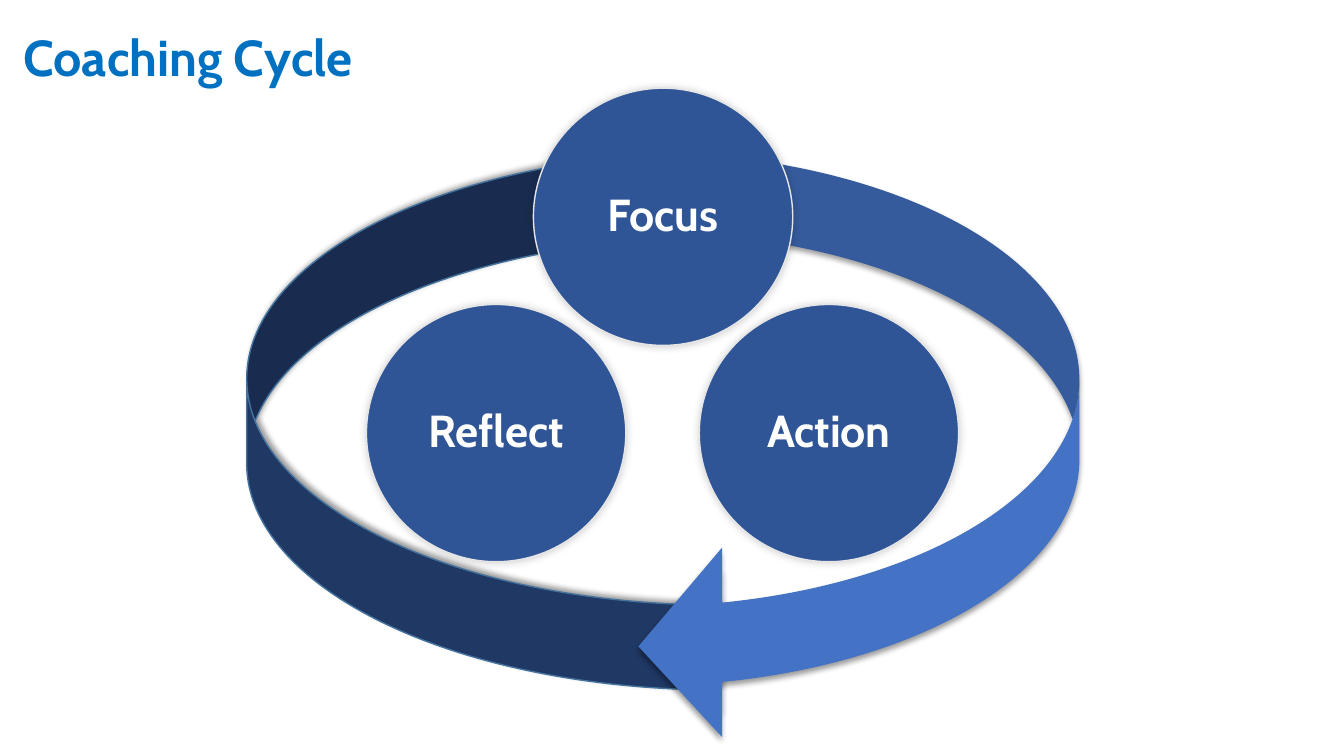
import pptx
import pptx.dml.color
import pptx.enum.shapes
import pptx.enum.text
import pptx.oxml.ns
import pptx.util
from lxml import etree

EMU_PER_PX = 9525
FONT = "Cabin"
CIRCLE_SIZE = (247, 245)
STAGES = [("Focus", 508, 84), ("Action", 666, 290), ("Reflect", 349, 290)]

qn = pptx.oxml.ns.qn
SHAPES = pptx.enum.shapes.MSO_SHAPE


def px(length):
    return pptx.util.Emu(length * EMU_PER_PX)


def rgb(hex_color):
    return pptx.dml.color.RGBColor.from_string(hex_color)


def add_shadow(shape, opacity, blur, distance, angle):
    """Give the shape a black outer shadow: percent, points, points, degrees."""
    shape.shadow.inherit = False
    effects = shape.element.spPr.find(qn("a:effectLst"))
    shadow = etree.SubElement(
        effects, qn("a:outerShdw"),
        blurRad=str(pptx.util.Pt(blur)), dist=str(pptx.util.Pt(distance)),
        dir=str(angle * 60000), algn="ctr", rotWithShape="0")
    color = etree.SubElement(shadow, qn("a:srgbClr"), val="000000")
    etree.SubElement(color, qn("a:alpha"), val=str(opacity * 1000))


def add_filled(slide, preset, box, fill, line, shadow):
    shape = slide.shapes.add_shape(preset, *map(px, box))
    shape.fill.solid()
    shape.fill.fore_color.rgb = rgb(fill)
    if line:
        shape.line.color.rgb = rgb(line)
        shape.line.width = pptx.util.Pt(1)
    else:
        shape.line.fill.background()
    add_shadow(shape, *shadow)
    return shape


def add_band(slide, box, adjustments, fill, line=None, angle=0, mirrored=False):
    """Add one curved arrow of the ring around the stages."""
    band = add_filled(slide, SHAPES.CURVED_RIGHT_ARROW, box, fill, line,
                      (40, 4, 3, angle))
    for index, value in enumerate(adjustments):
        band.adjustments[index] = value
    if mirrored:
        band.element.spPr.find(qn("a:xfrm")).set("flipH", "1")


def write_text(frame, text, size, color, align, spacing=1.0):
    paragraph = frame.paragraphs[0]
    paragraph.alignment = align
    paragraph.line_spacing = spacing
    run = paragraph.add_run()
    run.text = text
    run.font.name = FONT
    run.font.size = pptx.util.Pt(size)
    run.font.bold = True
    run.font.color.rgb = rgb(color)


def add_stage(slide, label, left, top):
    circle = add_filled(slide, SHAPES.OVAL, (left, top, *CIRCLE_SIZE),
                        "2F5597", "E7E6E6", (20, 6, 0, 315))
    frame = circle.text_frame
    frame.word_wrap = True
    frame.vertical_anchor = pptx.enum.text.MSO_ANCHOR.MIDDLE
    frame.margin_left = frame.margin_right = px(4)
    frame.margin_top = frame.margin_bottom = px(4)
    write_text(frame, label, size=32, color="FFFFFF", spacing=0.9,
               align=pptx.enum.text.PP_ALIGN.CENTER)


def add_title(slide, text):
    title = slide.shapes.add_textbox(*map(px, (13, 20, 363, 68)))
    frame = title.text_frame
    frame.word_wrap = False
    frame.auto_size = pptx.enum.text.MSO_AUTO_SIZE.SHAPE_TO_FIT_TEXT
    write_text(frame, text, size=36, color="0070C0",
               align=pptx.enum.text.PP_ALIGN.LEFT)


def main():
    deck = pptx.Presentation()
    deck.slide_width, deck.slide_height = px(1280), px(720)
    slide = deck.slides.add_slide(deck.slide_layouts[6])

    add_band(slide, (235, 145, 449, 539), (0.18, 0.3, 0),
             "203864", line="43739E", angle=315)
    add_band(slide, (608, 145, 420, 561), (0.18, 0.43, 0.19),
             "4472C4", angle=90, mirrored=True)
    for label, left, top in STAGES:
        add_stage(slide, label, left, top)
    add_title(slide, "Coaching Cycle")

    deck.save("out.pptx")


if __name__ == "__main__":
    main()
